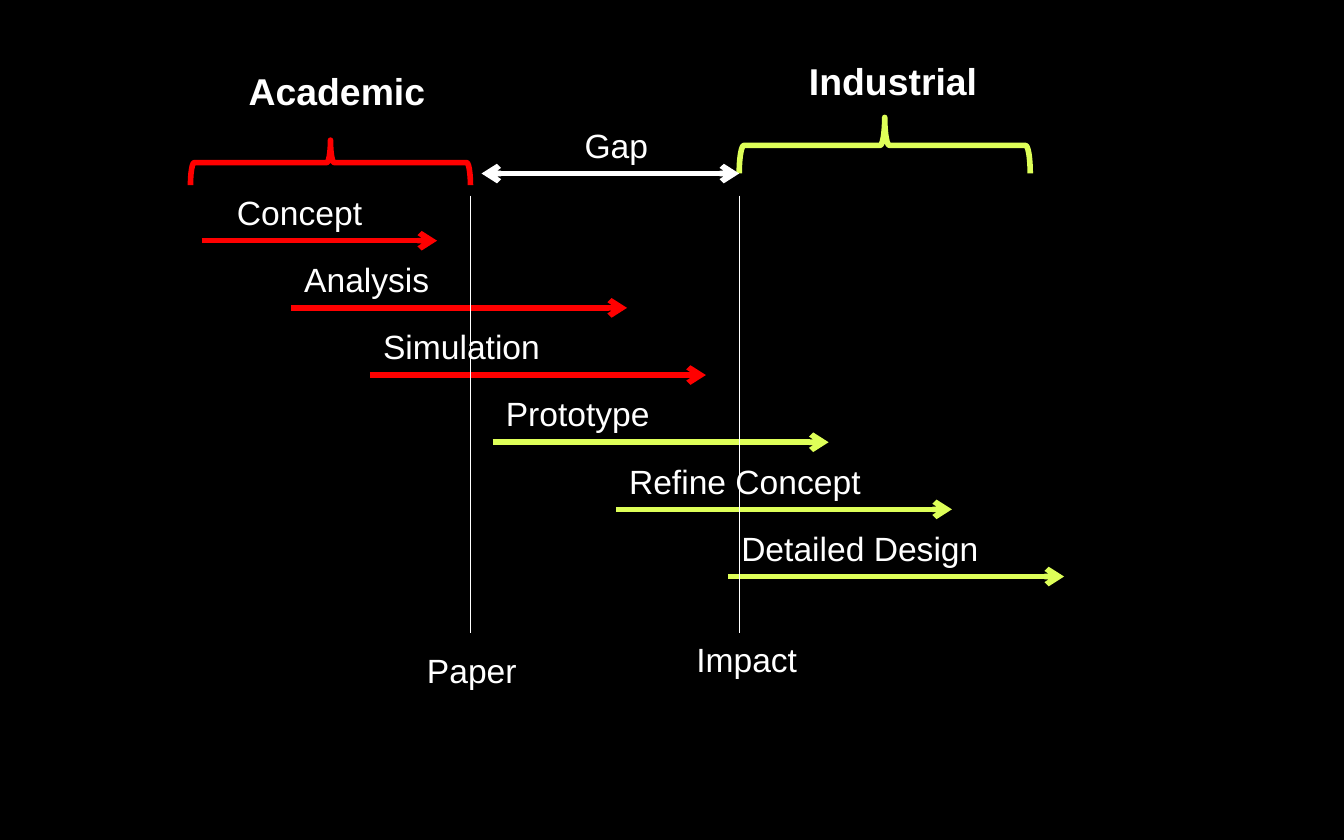
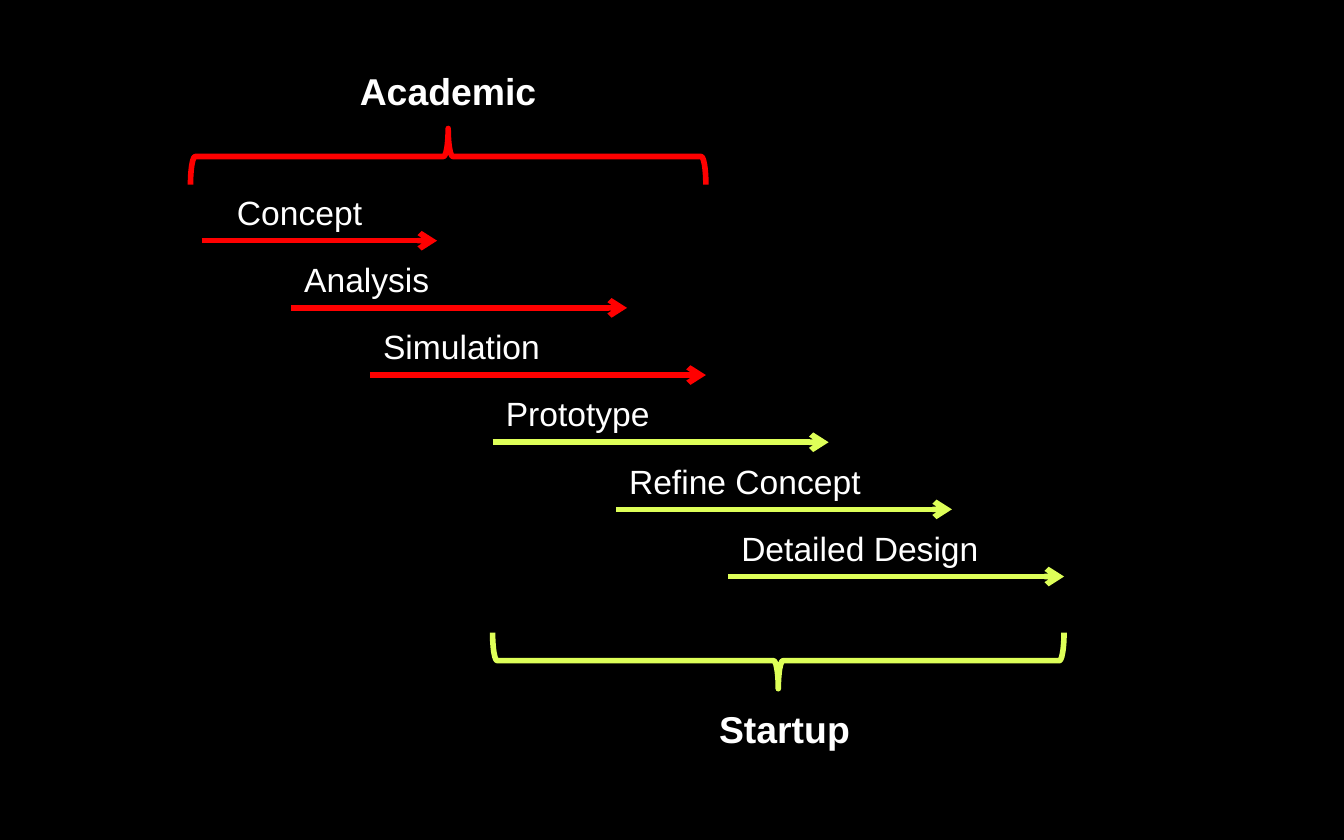
from typing import NamedTuple

from lxml.etree import SubElement
from pptx import Presentation
from pptx.dml.color import RGBColor
from pptx.enum.shapes import MSO_CONNECTOR, MSO_SHAPE
from pptx.enum.text import MSO_AUTO_SIZE
from pptx.oxml.ns import qn
from pptx.slide import Slide
from pptx.util import Cm, Pt

# Shared look
COLORS = {
    "background": "000000",
    "text": "FFFFFF",
    "academic": "FF0000",
    "industry": "DEFF58",
}
LABEL_FONT = {"name": "Arial", "size": Pt(18), "bold": False}
HEADING_FONT = {"name": "Arial", "size": Pt(20), "bold": True}
LABEL_HEIGHT, HEADING_HEIGHT = 1.02, 1.12
THICK, THIN = 3, 0.75

# Staircase of phases, in centimetres
FIRST_ARROW_Y = 4.55
ROW_STEP = 1.27
LABEL_RISE = 1.05


class Phase(NamedTuple):
    name: str
    color: str
    start: float
    label_width: float
    length: float = 6.35
    label_indent: float = 0


class Label(NamedTuple):
    text: str
    left: float
    top: float
    width: float


class Brace(NamedTuple):
    """Horizontal brace, given by the area it covers on the slide."""
    heading: Label
    color: str
    left: float
    top: float
    width: float
    height: float = 1.06
    rotation: int = 90


class Milestone(NamedTuple):
    x: float
    label: Label


PHASES = [
    Phase("Concept", "academic", 3.81, 2.9, length=4.45, label_indent=0.42),
    Phase("Analysis", "academic", 5.5, 2.9),
    Phase("Simulation", "academic", 6.99, 3.51),
    Phase("Prototype", "industry", 9.31, 3.25),
    Phase("Refine Concept", "industry", 11.64, 4.93),
    Phase("Detailed Design", "industry", 13.76, 5.03),
]
GAP_BRACES = [
    Brace(Label("Academic", 4.45, 1.17, 3.89), "academic", 3.6, 2.65, 5.29, 0.85),
    Brace(Label("Industrial", 15.04, 0.97, 3.71), "industry", 13.97, 2.22, 5.5),
]
OVERLAP_BRACES = [
    Brace(Label("Academic", 6.55, 1.17, 3.89), "academic", 3.6, 2.43, 9.74),
    Brace(Label("Startup", 13.34, 13.23, 3.0), "industry", 9.31, 11.96, 10.8,
          rotation=270),
]
GAP_LABEL = Label("Gap", 10.8, 2.24, 1.73)
MILESTONES = [
    Milestone(8.89, Label("Paper", 7.82, 12.17, 2.24)),
    Milestone(13.97, Label("Impact", 12.91, 11.96, 2.44)),
]


def rgb(color: str) -> RGBColor:
    return RGBColor.from_string(COLORS[color])


def add_label(page: Slide, label: Label, height: float = LABEL_HEIGHT,
              style: dict = LABEL_FONT) -> None:
    box = page.shapes.add_textbox(Cm(label.left), Cm(label.top),
                                  Cm(label.width), Cm(height))
    frame = box.text_frame
    frame.word_wrap = False
    frame.auto_size = MSO_AUTO_SIZE.SHAPE_TO_FIT_TEXT
    span = frame.paragraphs[0].add_run()
    span.text = label.text
    for attribute, value in style.items():
        setattr(span.font, attribute, value)
    span.font.color.rgb = rgb("text")


def add_line(page: Slide, start: tuple[float, float], end: tuple[float, float],
             color: str, weight: float, arrow_ends: tuple[str, ...] = ()) -> None:
    line = page.shapes.add_connector(MSO_CONNECTOR.STRAIGHT,
                                     *map(Cm, start), *map(Cm, end))
    line.line.color.rgb = rgb(color)
    line.line.width = Pt(weight)
    properties = line._element.spPr
    for arrow_end in arrow_ends:
        SubElement(properties.find(qn("a:ln")), qn(f"a:{arrow_end}"), type="arrow")
    SubElement(properties, qn("a:effectLst"))


def add_phases(page: Slide) -> None:
    for row, phase in enumerate(PHASES):
        y = FIRST_ARROW_Y + row * ROW_STEP
        add_line(page, (phase.start, y), (phase.start + phase.length, y),
                 phase.color, THICK, ("tailEnd",))
        add_label(page, Label(phase.name, phase.start + phase.label_indent,
                              y - LABEL_RISE, phase.label_width))


def add_brace(page: Slide, brace: Brace) -> None:
    # The upright brace shares its centre with the area it covers once turned
    shift = (brace.width - brace.height) / 2
    shape = page.shapes.add_shape(MSO_SHAPE.LEFT_BRACE,
                                  Cm(brace.left + shift), Cm(brace.top - shift),
                                  Cm(brace.height), Cm(brace.width))
    shape.rotation = brace.rotation
    shape.shadow.inherit = False
    shape.fill.background()
    shape.line.color.rgb = rgb(brace.color)
    shape.line.width = Pt(THICK)
    add_label(page, brace.heading, HEADING_HEIGHT, HEADING_FONT)


def add_timeline_page(deck: Presentation, braces: list[Brace]) -> Slide:
    page = deck.slides.add_slide(deck.slide_layouts.get_by_name("Blank"))
    add_phases(page)
    for brace in braces:
        add_brace(page, brace)
    return page


def main() -> None:
    deck = Presentation()
    deck.slide_width, deck.slide_height = Cm(25.4), Cm(15.88)
    background = deck.slide_master.background.fill
    background.solid()
    background.fore_color.rgb = rgb("background")

    # Slide 1: gap between academic and industrial work
    gap_page = add_timeline_page(deck, GAP_BRACES)
    add_line(gap_page, (9.1, 3.28), (13.97, 3.28), "text", THICK,
             ("headEnd", "tailEnd"))
    add_label(gap_page, GAP_LABEL)
    for milestone in MILESTONES:
        add_line(gap_page, (milestone.x, 3.7), (milestone.x, 11.96), "text", THIN)
        add_label(gap_page, milestone.label)

    # Slide 2: a startup takes over without a gap
    add_timeline_page(deck, OVERLAP_BRACES)

    deck.save("out.pptx")


if __name__ == "__main__":
    main()
